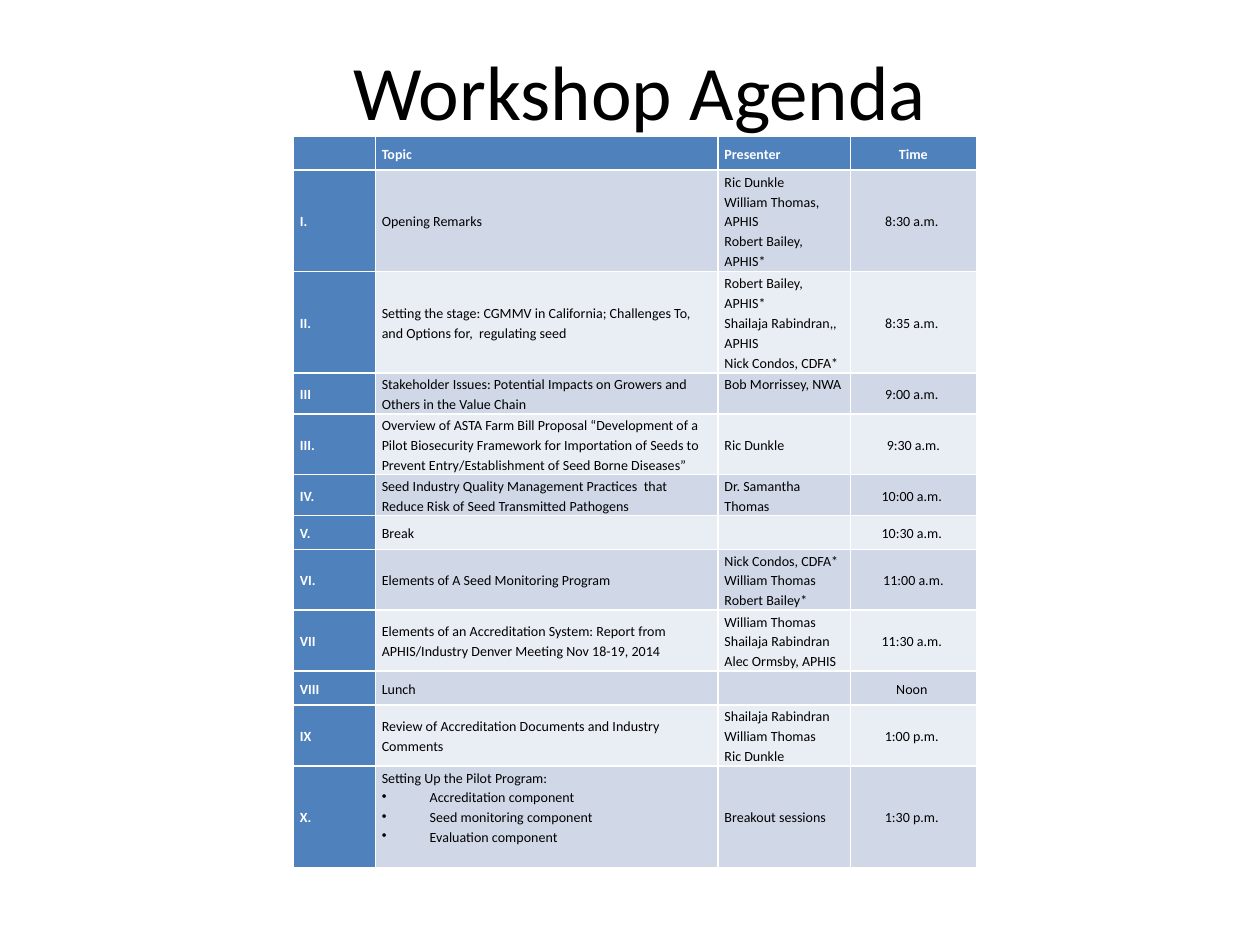
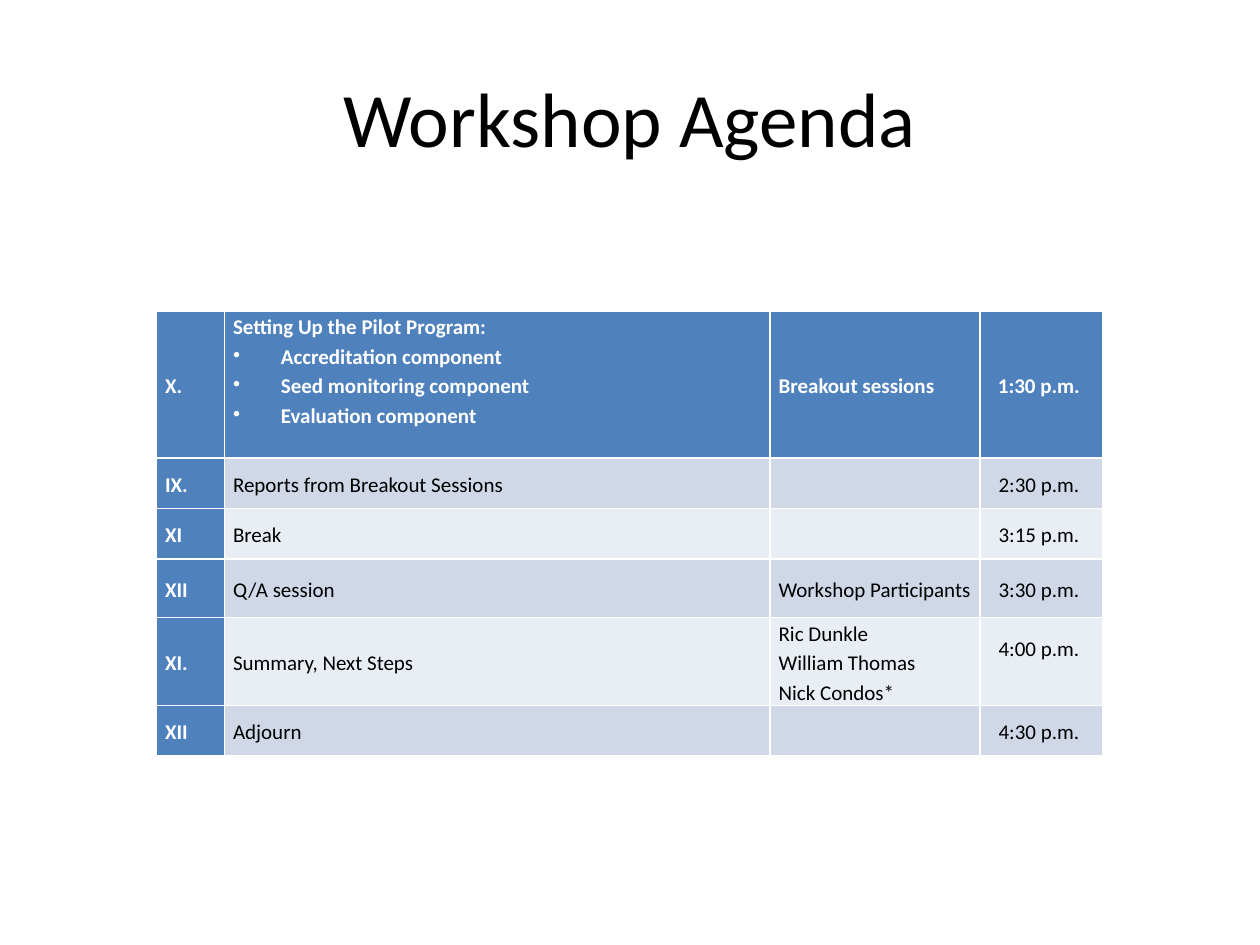
from dataclasses import dataclass

from lxml.etree import SubElement
from pptx import Presentation
from pptx.dml.color import RGBColor
from pptx.enum.text import MSO_ANCHOR, PP_ALIGN
from pptx.oxml.ns import qn
from pptx.util import Inches, Pt

SLIDE_WIDTH, SLIDE_HEIGHT = Inches(10), Inches(7.5)
FONT = "Calibri"
BLUE, WHITE, BLACK = "4F81BD", "FFFFFF", "000000"
BANDS = ("D0D8E8", "E9EDF4")
BULLET = "• "
BULLET_INDENT = Inches(0.38)

PILOT_PROGRAM = [
    "Setting Up the Pilot Program:",
    BULLET + "Accreditation component",
    BULLET + "Seed monitoring component",
    BULLET + "Evaluation component",
]

# Each session: height in text lines, numeral, topic, presenters, time.
MORNING = [
    (1, "", "Topic", "Presenter", "Time"),
    (5, "I.", "Opening Remarks",
     ["Ric Dunkle", "William Thomas, APHIS", "Robert Bailey, APHIS*"], "8:30 a.m. "),
    (5, "II.",
     "Setting the stage: CGMMV in California; Challenges To, and Options for,  regulating seed",
     ["Robert Bailey, APHIS*", "Shailaja Rabindran,, APHIS", "Nick Condos, CDFA*"],
     "8:35 a.m. "),
    (2, "III",
     "Stakeholder Issues: Potential Impacts on Growers and Others in the Value Chain",
     "Bob Morrissey, NWA", "9:00 a.m. "),
    (3, "III.",
     "Overview of ASTA Farm Bill Proposal “Development of a Pilot Biosecurity Framework "
     "for Importation of Seeds to Prevent Entry/Establishment of Seed Borne Diseases”",
     "Ric Dunkle", "9:30 a.m."),
    (2, "IV.",
     "Seed Industry Quality Management Practices  that Reduce Risk of Seed "
     "Transmitted Pathogens",
     "Dr. Samantha Thomas", "10:00 a.m. "),
    (1, "V.", "Break", "", "10:30 a.m. "),
    (3, "VI.", "Elements of A Seed Monitoring Program",
     ["Nick Condos, CDFA*", "William Thomas", "Robert Bailey*"], "11:00 a.m."),
    (3, "VII",
     "Elements of an Accreditation System: Report from APHIS/Industry Denver Meeting "
     "Nov 18-19, 2014",
     ["William Thomas", "Shailaja Rabindran", "Alec Ormsby, APHIS"], "11:30 a.m. "),
    (1, "VIII", "Lunch", "", "Noon "),
    (3, "IX", "Review of Accreditation Documents and Industry Comments",
     ["Shailaja Rabindran", "William Thomas", "Ric Dunkle"], "1:00 p.m. "),
    (5, "X.", PILOT_PROGRAM, "Breakout sessions", "1:30 p.m. "),
]

AFTERNOON = [
    (5, "X.", PILOT_PROGRAM, "Breakout sessions", "1:30 p.m. "),
    (1, "IX.", "Reports from Breakout Sessions", "", "2:30 p.m. "),
    (1, "XI", "Break", "", "3:15 p.m. "),
    (2, "XII", "Q/A session", "Workshop Participants", "3:30 p.m. "),
    (3, "XI.", "Summary, Next Steps",
     ["Ric Dunkle", "William Thomas", "Nick Condos*"], "4:00 p.m. "),
    (1, "XII", "Adjourn", "", "4:30 p.m. "),
]


@dataclass
class Agenda:
    title_area: tuple
    corner: tuple
    columns: tuple
    line: float
    shortest_row: float
    size: int
    side_margin: float
    raised: set
    sessions: list


AGENDAS = [
    Agenda((5.8, 0, 90, 18.93), (23.3, 14.4), (6.5, 27.2, 10.5, 10),
           2.15, 3.6, 8, 0.05, {(3, 2), (11, 1)}, MORNING),
    Agenda((5, 4, 90, 16.67), (12.4, 32.93), (5.4, 43.3, 16.7, 9.7),
           3.1, 5.33, 12, 0.07, {(0, 1), (4, 3)}, AFTERNOON),
]


def across(percent):
    return round(SLIDE_WIDTH * percent / 100)


def down(percent):
    return round(SLIDE_HEIGHT * percent / 100)


def color(hex_string):
    return RGBColor.from_string(hex_string)


def style_font(font, size, ink, bold=False):
    font.name = FONT
    font.size = Pt(size)
    font.bold = bold
    font.color.rgb = color(ink)


def add_title(slide, area):
    title = slide.shapes.title
    left, top, width, height = area
    title.left, title.top = across(left), down(top)
    title.width, title.height = across(width), down(height)
    title.text_frame.vertical_anchor = MSO_ANCHOR.MIDDLE
    heading = title.text_frame.paragraphs[0]
    heading.alignment = PP_ALIGN.CENTER
    run = heading.add_run()
    run.text = "Workshop Agenda"
    style_font(run.font, 44, BLACK)


def add_bullet(paragraph):
    properties = paragraph._p.get_or_add_pPr()
    properties.set("marL", str(BULLET_INDENT))
    properties.set("indent", str(-BULLET_INDENT))
    SubElement(properties, qn("a:buChar")).set("char", BULLET.strip())


def write_line(paragraph, text, size, ink, bold, centred):
    paragraph.line_spacing = 1.15
    paragraph.alignment = PP_ALIGN.CENTER if centred else PP_ALIGN.LEFT
    if text.startswith(BULLET):
        add_bullet(paragraph)
        text = text.removeprefix(BULLET)
    if text:
        run = paragraph.add_run()
        run.text = text
        style_font(run.font, size, ink, bold)
    else:
        SubElement(paragraph._p, qn("a:endParaRPr")).set("sz", str(size * 100))


def fill_cell(cell, content, row, column, agenda):
    accented = row == 0 or column == 0
    cell.fill.solid()
    cell.fill.fore_color.rgb = color(BLUE if accented else BANDS[(row - 1) % 2])
    cell.vertical_anchor = MSO_ANCHOR.MIDDLE
    cell.margin_left = cell.margin_right = Inches(agenda.side_margin)
    cell.margin_top = 0
    cell.margin_bottom = down(agenda.line) if (row, column) in agenda.raised else 0
    lines = [content] if isinstance(content, str) else content
    frame = cell.text_frame
    for index, text in enumerate(lines):
        paragraph = frame.add_paragraph() if index else frame.paragraphs[0]
        write_line(paragraph, text, agenda.size, WHITE if accented else BLACK,
                   accented, column == 3)


def add_agenda(slide, agenda):
    heights = [down(max(agenda.shortest_row, session[0] * agenda.line))
               for session in agenda.sessions]
    widths = [across(share) for share in agenda.columns]
    left, top = agenda.corner
    table = slide.shapes.add_table(len(heights), len(widths), across(left), down(top),
                                   sum(widths), sum(heights)).table
    table.first_col = True
    for column, width in zip(table.columns, widths):
        column.width = width
    for row, (height, session) in enumerate(zip(heights, agenda.sessions)):
        table.rows[row].height = height
        for column, content in enumerate(session[1:]):
            fill_cell(table.cell(row, column), content, row, column, agenda)


def main():
    deck = Presentation()
    deck.slide_width, deck.slide_height = SLIDE_WIDTH, SLIDE_HEIGHT
    for agenda in AGENDAS:
        slide = deck.slides.add_slide(deck.slide_layouts[5])
        add_title(slide, agenda.title_area)
        add_agenda(slide, agenda)
    deck.save("out.pptx")


if __name__ == "__main__":
    main()
